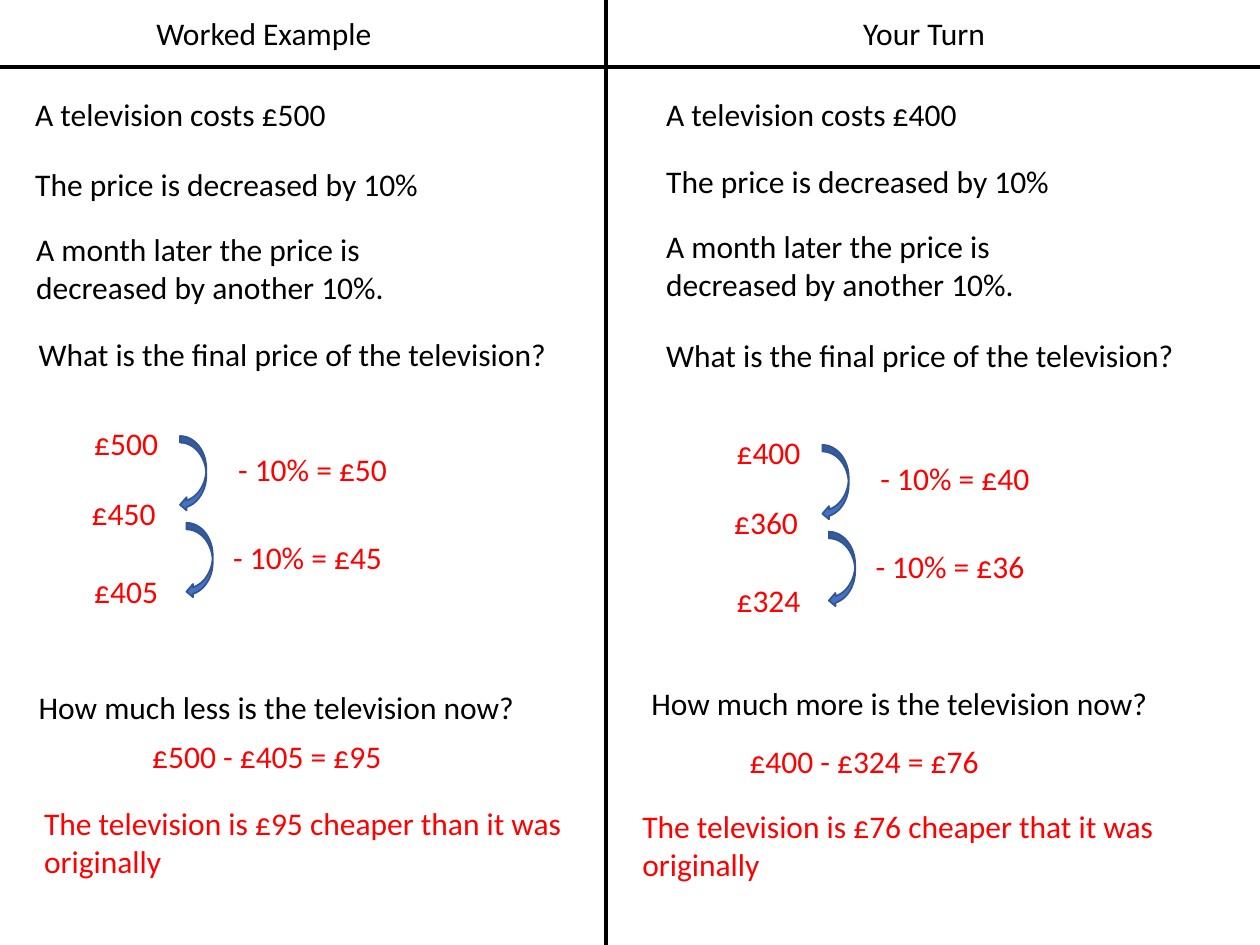
from dataclasses import dataclass

from lxml import etree
from pptx import Presentation
from pptx.dml.color import RGBColor
from pptx.enum import shapes, text
from pptx.oxml import ns
from pptx.util import Cm, Pt


@dataclass(frozen=True)
class Theme:
    font: str = "Calibri"
    size: Pt = Pt(18)
    question: RGBColor = RGBColor(0x00, 0x00, 0x00)
    answer: RGBColor = RGBColor(0xFF, 0x00, 0x00)
    arrow: RGBColor = RGBColor(0x44, 0x72, 0xC4)
    arrow_edge: RGBColor = RGBColor(0x32, 0x54, 0x91)


theme = Theme()
LINE_HEIGHT, TWO_LINES = 1.02, 1.8

presentation = Presentation()
presentation.slide_width, presentation.slide_height = Cm(25.4), Cm(19.05)
slide = presentation.slides.add_slide(presentation.slide_layouts[6])


def add_text(content, left, top, width, color, height=LINE_HEIGHT, wrap=True, align=text.PP_ALIGN.LEFT):
    """Add a text box; positions and sizes are in centimetres."""
    box = slide.shapes.add_textbox(Cm(left), Cm(top), Cm(width), Cm(height))
    frame = box.text_frame
    frame.text = content
    frame.word_wrap = wrap
    frame.auto_size = text.MSO_AUTO_SIZE.SHAPE_TO_FIT_TEXT
    paragraph = frame.paragraphs[0]
    paragraph.alignment = align
    font = paragraph.runs[0].font
    font.name, font.size = theme.font, theme.size
    font.color.rgb = color


# Column headings and the lines that divide the page
for heading, left in (("Worked Example", 2.87), ("Your Turn", 16.18)):
    add_text(heading, left, 0.15, 4.9, theme.question, align=text.PP_ALIGN.CENTER)

for x1, y1, x2, y2 in ((12.22, 0, 12.22, 19.05), (0, 1.35, 25.4, 1.35)):
    divider = slide.shapes.add_connector(
        shapes.MSO_CONNECTOR.STRAIGHT, Cm(x1), Cm(y1), Cm(x2), Cm(y2))
    divider.line.color.rgb = theme.question
    divider.line.width = Pt(2.5)
    etree.SubElement(divider._element.spPr, ns.qn("a:effectLst"))

# Questions: wording, left, top, width, number of lines
questions = (
    ("A television costs £500", 0.46, 1.8, 6.43, 1),
    ("The price is decreased by 10%", 0.46, 3.2, 8.33, 1),
    ("A month later the price is decreased by another 10%.", 0.48, 4.52, 8.31, 2),
    ("What is the final price of the television?", 0.53, 6.63, 10.87, 1),
    ("How much less is the television now?", 0.53, 13.74, 10.46, 1),
    ("A television costs £400", 13.18, 1.8, 6.43, 1),
    ("The price is decreased by 10%", 13.18, 3.15, 8.33, 1),
    ("A month later the price is decreased by another 10%.", 13.18, 4.45, 8.31, 2),
    ("What is the final price of the television?", 13.18, 6.65, 10.87, 1),
    ("How much more is the television now?", 12.88, 13.67, 10.64, 1),
)
for question, left, top, width, lines in questions:
    height = TWO_LINES if lines == 2 else LINE_HEIGHT
    add_text(question, left, top, width, theme.question, height, wrap=lines == 2)

# Working: the second column repeats the first, shifted right and slightly down
price_places = ((1.65, 8.43), (1.6, 9.83), (1.65, 11.4))
arrow_places = ((3.63, 8.79), (3.76, 10.54))
discount_places = ((4.55, 8.94), (4.45, 10.72))
workings = (
    (0, 0, ("£500", "£450", "£405"), ("- 10% = £50", "- 10% = £45")),
    (12.95, 0.18, ("£400", "£360", "£324"), ("- 10% = £40", "- 10% = £36")),
)
for shift_x, shift_y, prices, discounts in workings:
    for price, (left, top) in zip(prices, price_places):
        add_text(price, left + shift_x, top + shift_y, 2.01, theme.answer)
    for left, top in arrow_places:
        arrow = slide.shapes.add_shape(
            shapes.MSO_SHAPE.CURVED_LEFT_ARROW,
            Cm(left + shift_x), Cm(top + shift_y), Cm(0.53), Cm(1.52))
        arrow.shadow.inherit = False
        arrow.fill.solid()
        arrow.fill.fore_color.rgb = theme.arrow
        arrow.line.color.rgb = theme.arrow_edge
        arrow.line.width = Pt(1)
    for discount, (left, top) in zip(discounts, discount_places):
        add_text(discount, left + shift_x, top + shift_y, 4.19, theme.answer)

# Final answers
answers = (
    ("£500 - £405 = £95", 2.82, 14.73, 5.61, LINE_HEIGHT),
    ("The television is £95 cheaper than it was originally", 0.64, 16.08, 11.96, TWO_LINES),
    ("£400 - £324 = £76", 14.86, 14.83, 5.61, LINE_HEIGHT),
    ("The television is £76 cheaper that it was originally", 12.7, 16.15, 11.96, TWO_LINES),
)
for answer, left, top, width, height in answers:
    add_text(answer, left, top, width, theme.answer, height)

presentation.save("out.pptx")
